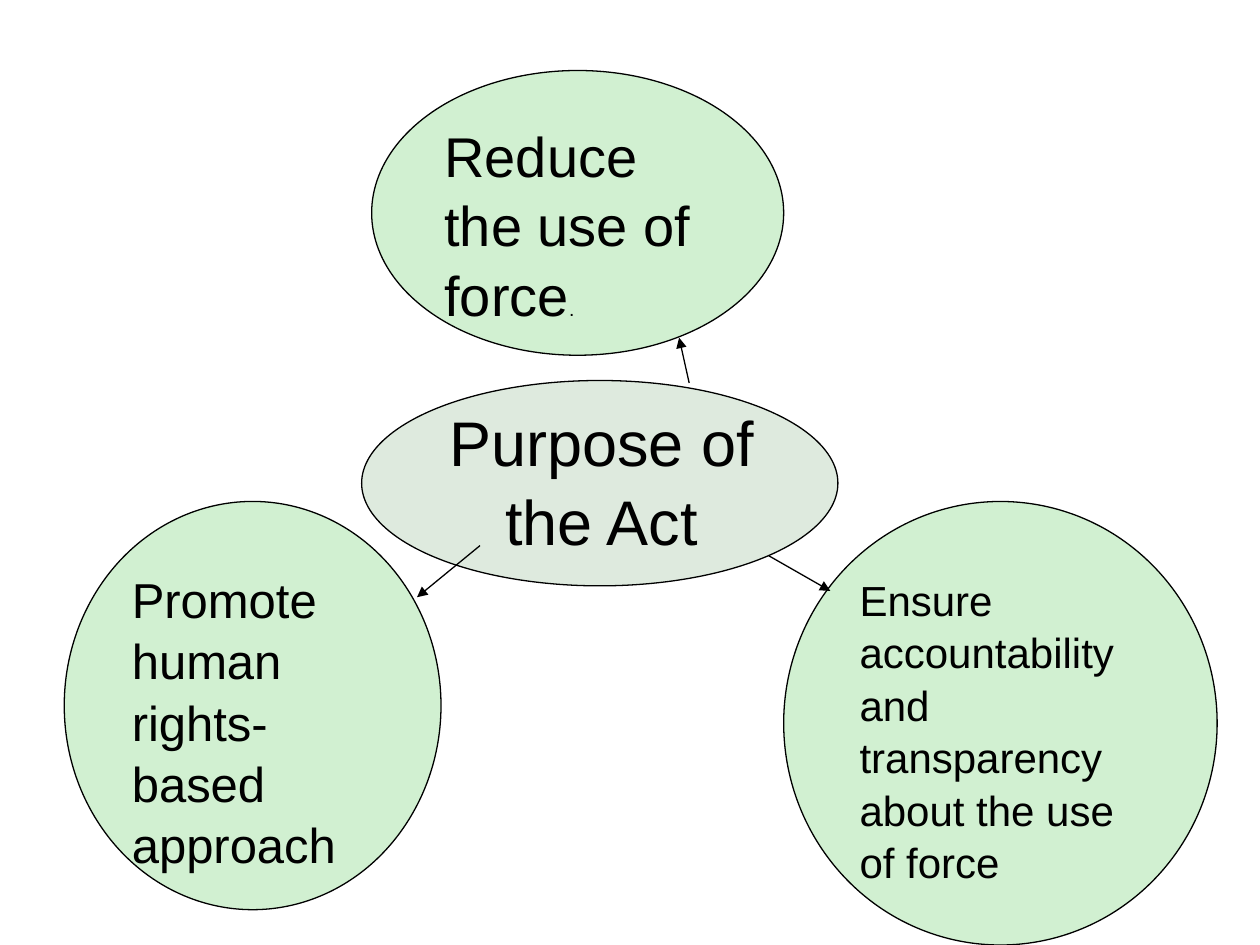
from lxml import etree
from pptx import Presentation
from pptx.dml.color import RGBColor
from pptx.enum.shapes import MSO_CONNECTOR, MSO_SHAPE
from pptx.enum.text import MSO_ANCHOR, MSO_AUTO_SIZE, PP_ALIGN
from pptx.oxml.ns import qn
from pptx.util import Inches, Pt

OVAL = MSO_SHAPE.OVAL
STRAIGHT = MSO_CONNECTOR.STRAIGHT
TOP = MSO_ANCHOR.TOP
LEFT, CENTER = PP_ALIGN.LEFT, PP_ALIGN.CENTER

COLORS = {"hub": "DEEADE", "goal": "D1F0D1", "ink": "000000"}
INK = RGBColor.from_string(COLORS["ink"])


def add_oval(box, fill):
    sp = slide.shapes.add_shape(OVAL, *(Inches(v) for v in box))
    sp.shadow.inherit = False
    sp.fill.solid()
    sp.fill.fore_color.rgb = RGBColor.from_string(COLORS[fill])
    sp.line.color.rgb = INK
    sp.line.width = Pt(0.75)
    return sp


def write(sp, text, size, align):
    tf = sp.text_frame
    tf.word_wrap = True
    tf.auto_size = MSO_AUTO_SIZE.NONE
    tf.vertical_anchor = TOP
    p = tf.paragraphs[0]
    p.alignment = align
    p.line_spacing = 1.04
    p.font.name = "Arial"
    p.font.color.rgb = INK
    p.font.size = Pt(size)
    p.add_run().text = text
    return p


prs = Presentation()
prs.slide_width, prs.slide_height = Inches(10), Inches(7.5)
slide = prs.slides.add_slide(prs.slide_layouts[5])

# Hub, with the title on top of it
add_oval((2.87, 3.02, 3.78, 1.63), "hub")
title = slide.shapes.title
title.left, title.top = Inches(3.46), Inches(3.13)
title.width, title.height = Inches(2.63), Inches(1.31)
write(title, "Purpose of the Act", 36, CENTER)
slide.shapes._spTree.append(title._element)

# Goals around the hub
goals = [
    ((6.22, 3.98, 3.44, 3.52), 24,
     "Ensure accountability and transparency about the use of force", ""),
    ((2.95, 0.56, 3.27, 2.26), 32, "Reduce the use of force", "."),
    ((0.51, 3.98, 2.99, 3.24), 28, "Promote human rights-based approach", ""),
]
for box, size, text, small_end in goals:
    p = write(add_oval(box, "goal"), text, size, LEFT)
    if small_end:
        r = p.add_run()
        r.text = small_end
        r.font.size = Pt(11)

# Arrows from the hub to the goals
arrows = [
    (3.81, 4.33, 3.31, 4.74),
    (5.47, 3.04, 5.39, 2.68),
    (6.1, 4.41, 6.59, 4.69),
]
for ends in arrows:
    arrow = slide.shapes.add_connector(STRAIGHT, *(Inches(v) for v in ends))
    arrow.line.color.rgb = INK
    arrow.line.width = Pt(0.75)
    etree.SubElement(arrow.line._get_or_add_ln(), qn("a:tailEnd"), type="triangle")
    etree.SubElement(arrow._element.spPr, qn("a:effectLst"))

prs.save("out.pptx")
